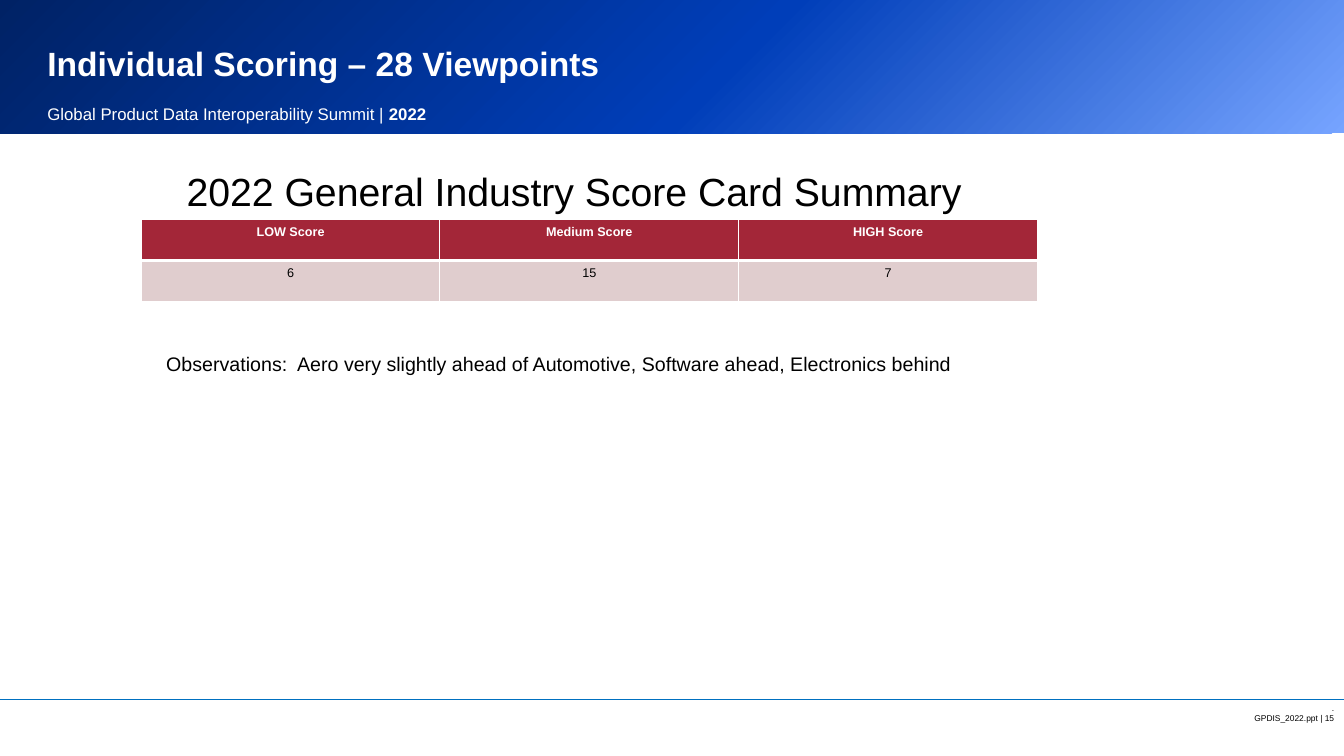
import pptx
import pptx.dml.color
import pptx.enum.shapes
import pptx.enum.text
import pptx.oxml
import pptx.oxml.ns
import pptx.util
from pptx.util import Inches

WIDTH, HEIGHT = 13.33, 7.5
FONT = "Arial"
WHITE, BLACK, RULE = "FFFFFF", "000000", "0070C0"
HEADER_FILL, SCORE_FILL = "A32638", "E0CDCE"
BANNER_STOPS = [(0, "76A4FF"), (46, "003EB9"), (100, "002265")]
BANNER_ANGLE = 225

TITLE = "Individual Scoring – 28 Viewpoints"
SUMMIT = [("Global Product Data Interoperability Summit | ", False), ("2022", True)]
FOOTER = [".", "GPDIS_2022.ppt | 15"]
HEADING = "2022 General Industry Score Card Summary"
OBSERVATIONS = "Observations:  Aero very slightly ahead of Automotive, Software ahead, Electronics behind"
SCORES = [("LOW Score", "Medium Score", "HIGH Score"), ("6", "15", "7")]
TABLE_AT = (1.4, 2.18, 8.89, 0.81)

ALIGN = pptx.enum.text.PP_ALIGN
ANCHOR = pptx.enum.text.MSO_ANCHOR


def rgb(color):
    return pptx.dml.color.RGBColor.from_string(color)


def add_run(p, text, size, color, bold=False):
    r = p.add_run()
    r.text = text
    r.font.name = FONT
    r.font.size = pptx.util.Pt(size)
    r.font.bold = bold
    r.font.color.rgb = rgb(color)


def add_text(s, at, paragraphs, size, color=BLACK, insets=(0.1, 0.05, 0.1, 0.05),
             wrap=True, align=ALIGN.LEFT, anchor=ANCHOR.TOP):
    """Add a text box; each paragraph is a list of (text, bold) runs."""
    tf = s.shapes.add_textbox(*map(Inches, at)).text_frame
    tf.word_wrap = wrap
    tf.vertical_anchor = anchor
    tf.margin_left, tf.margin_top, tf.margin_right, tf.margin_bottom = map(Inches, insets)
    for i, runs in enumerate(paragraphs):
        p = tf.add_paragraph() if i else tf.paragraphs[0]
        p.alignment = align
        for text, bold in runs:
            add_run(p, text, size, color, bold)
    return tf


def add_banner(s):
    sp = s.shapes.add_shape(pptx.enum.shapes.MSO_SHAPE.RECTANGLE, 0, 0, Inches(WIDTH), Inches(1.32))
    sp.shadow.inherit = False
    sp.line.fill.background()
    stops = "".join(f'<a:gs pos="{pos * 1000}"><a:srgbClr val="{color}"/></a:gs>'
                    for pos, color in BANNER_STOPS)
    gradient = pptx.oxml.parse_xml(
        f'<a:gradFill {pptx.oxml.ns.nsdecls("a")} rotWithShape="1"><a:gsLst>{stops}</a:gsLst>'
        f'<a:lin ang="{BANNER_ANGLE * 60000}" scaled="1"/></a:gradFill>')
    sp._element.spPr.find(pptx.oxml.ns.qn("a:prstGeom")).addnext(gradient)


def add_rule(s, y):
    line = s.shapes.add_connector(pptx.enum.shapes.MSO_CONNECTOR.STRAIGHT,
                                  0, Inches(y), Inches(WIDTH), Inches(y))
    line.line.color.rgb = rgb(RULE)
    line.line.width = pptx.util.Pt(0.5)
    line._element.spPr.append(
        pptx.oxml.parse_xml(f'<a:effectLst {pptx.oxml.ns.nsdecls("a")}/>'))


def set_borders(cell, widths):
    """Give a cell white borders; widths maps L, R, T and B to points."""
    tcPr = cell._tc.get_or_add_tcPr()
    for i, (side, width) in enumerate(widths.items()):
        tcPr.insert(i, pptx.oxml.parse_xml(
            f'<a:ln{side} {pptx.oxml.ns.nsdecls("a")} w="{width * 12700}">'
            f'<a:solidFill><a:srgbClr val="{WHITE}"/></a:solidFill></a:ln{side}>'))


def add_scores(s):
    table = s.shapes.add_table(len(SCORES), len(SCORES[0]), *map(Inches, TABLE_AT)).table
    for row, values in enumerate(SCORES):
        header = row == 0
        for col, value in enumerate(values):
            cell = table.cell(row, col)
            cell.fill.solid()
            cell.fill.fore_color.rgb = rgb(HEADER_FILL if header else SCORE_FILL)
            set_borders(cell, {"L": 1, "R": 1, "T": 1 if header else 3, "B": 3 if header else 1})
            p = cell.text_frame.paragraphs[0]
            p.alignment = ALIGN.CENTER
            add_run(p, value, 9, WHITE if header else BLACK, header)


def main():
    prs = pptx.Presentation()
    prs.slide_width, prs.slide_height = Inches(WIDTH), Inches(HEIGHT)
    s = prs.slides.add_slide(prs.slide_layouts[6])
    add_banner(s)
    add_text(s, (0, 0.98, WIDTH, 0.3), [SUMMIT], 12, WHITE, (0.47, 0.05, 0.5, 0.05))
    add_text(s, (9.29, 6.93, 4.04, 0.3), [[(text, False)] for text in FOOTER], 6, align=ALIGN.RIGHT)
    add_rule(s, 6.94)
    title = add_text(s, (0, 0.21, WIDTH, 0.62), [[(TITLE, True)]], 24, WHITE,
                     (0.47, 0.25, 0.5, 0), anchor=ANCHOR.MIDDLE)
    title.paragraphs[0].line_spacing = pptx.util.Pt(26)
    add_scores(s)
    add_text(s, (1.63, 1.61, 8.11, 0.57), [[(HEADING, False)]], 28,
             insets=(0.22, 0.05, 0.1, 0.05), wrap=False)
    add_text(s, (1.55, 3.44, 8.05, 0.34), [[(OBSERVATIONS, False)]], 14, wrap=False)
    prs.save("out.pptx")


if __name__ == "__main__":
    main()
